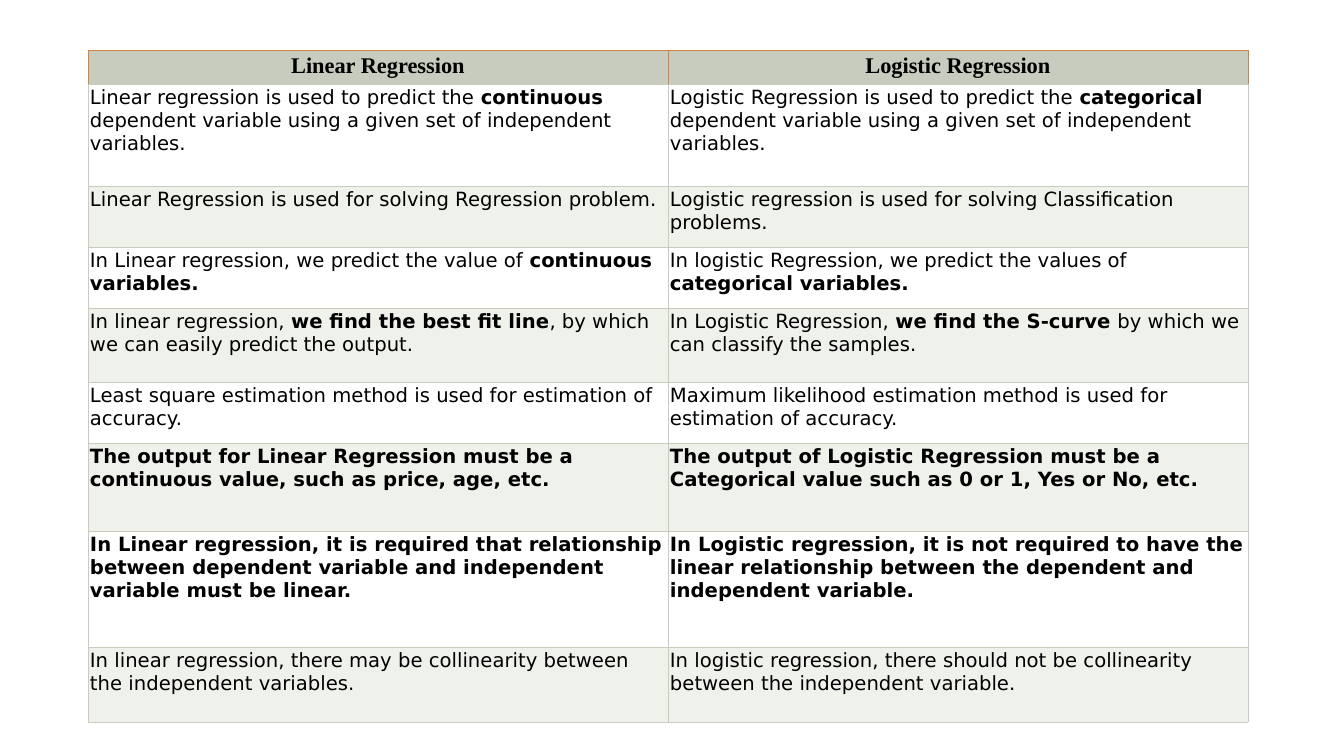
"""Build a slide with a table comparing linear and logistic regression."""
from lxml import etree
from pptx import Presentation
from pptx import util as u
from pptx.dml.color import RGBColor
from pptx.enum import text
from pptx.oxml import ns

PX = 914400 / 100.8
HUES = {"head": "C7CCBE", "plain": "FFFFFF", "band": "EFF1EB",
        "rule": "C7CCBE", "edge": "D8813E", "ink": "000000"}
ROWS = [
    (34, "**Linear Regression**", "**Logistic Regression**"),
    (102, "Linear regression is used to predict the **continuous** dependent "
          "variable using a given set of independent variables.",
          "Logistic Regression is used to predict the **categorical** dependent "
          "variable using a given set of independent variables."),
    (61, "Linear Regression is used for solving Regression problem.",
         "Logistic regression is used for solving Classification problems."),
    (61, "In Linear regression, we predict the value of **continuous variables.**",
         "In logistic Regression, we predict the values of **categorical variables.**"),
    (74, "In linear regression, **we find the best fit line**, by which we can "
         "easily predict the output.",
         "In Logistic Regression, **we find the S-curve **by which we can "
         "classify the samples."),
    (61, "Least square estimation method is used for estimation of accuracy.",
         "Maximum likelihood estimation method is used for estimation of accuracy."),
    (88, "**The output for Linear Regression must be a continuous value, "
         "such as price, age, etc.**",
         "**The output of Logistic Regression must be a Categorical value "
         "such as 0 or 1, Yes or No, etc.**"),
    (116, "**In Linear regression, it is required that relationship between "
          "dependent variable and independent variable must be linear.**",
          "**In Logistic regression, it is not required to have the linear "
          "relationship between the dependent and independent variable.**"),
    (75, "In linear regression, there may be collinearity between the "
         "independent variables.",
         "In logistic regression, there should not be collinearity between the "
         "independent variable."),
]


def px(n):
    return u.Emu(round(n * PX))


def border(cell, side, hue):
    props = cell._tc.get_or_add_tcPr()
    line = etree.SubElement(props, ns.qn("a:ln" + side), w=str(u.Pt(0.5)))
    fill = etree.SubElement(line, ns.qn("a:solidFill"))
    etree.SubElement(fill, ns.qn("a:srgbClr"), val=HUES[hue])


deck = Presentation()
deck.slide_width, deck.slide_height = px(1344), px(756)
slide = deck.slides.add_slide(deck.slide_layouts[6])
high = sum(row[0] for row in ROWS)
grid = slide.shapes.add_table(len(ROWS), 2, px(88), px(50), px(1160), px(high)).table
for col in grid.columns:
    col.width = px(580)

for i, (tall, *words) in enumerate(ROWS):
    grid.rows[i].height = px(tall)
    top = i == 0
    tint = "head" if top else "plain" if i % 2 else "band"
    for j, word in enumerate(words):
        cell = grid.cell(i, j)
        pad = px(4 if top else 2)
        cell.margin_left = cell.margin_right = pad
        cell.margin_top = cell.margin_bottom = pad
        for side in "LRTB":
            border(cell, side, "edge" if top and side != "B" else "rule")
        cell.fill.solid()
        cell.fill.fore_color.rgb = RGBColor.from_string(HUES[tint])
        para = cell.text_frame.paragraphs[0]
        para.alignment = text.PP_ALIGN.CENTER if top else text.PP_ALIGN.LEFT
        for k, part in enumerate(word.split("**")):
            if part:
                run = para.add_run()
                run.text = part
                run.font.name = "Times New Roman" if top else "DejaVu Sans"
                run.font.size = u.Pt(16 if top else 14)
                run.font.bold = k % 2 == 1
                run.font.color.rgb = RGBColor.from_string(HUES["ink"])

deck.save("out.pptx")
